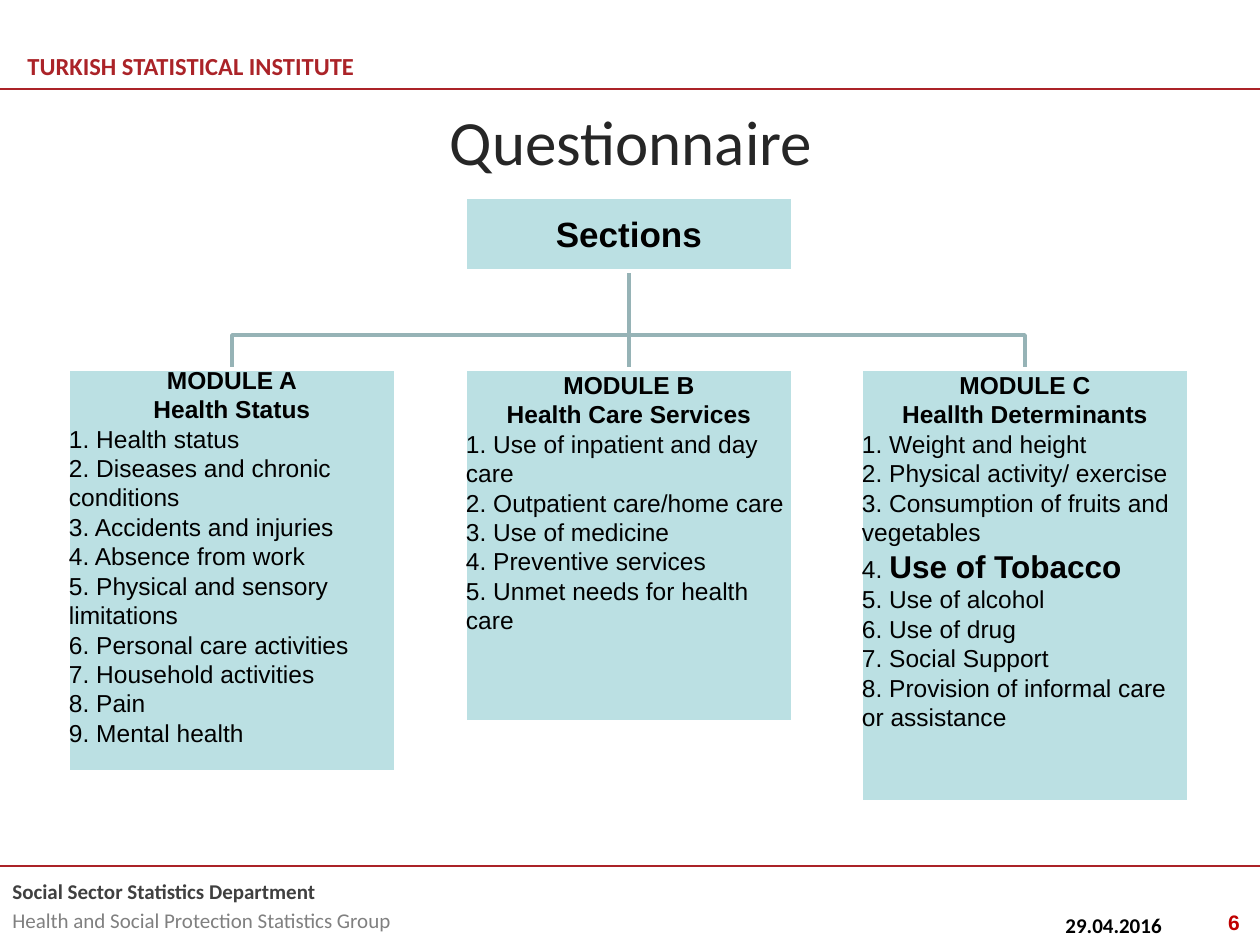
from lxml import etree
from pptx import Presentation
from pptx.dml.color import RGBColor
from pptx.enum.shapes import MSO_CONNECTOR, MSO_SHAPE
from pptx.enum.text import MSO_ANCHOR, PP_ALIGN
from pptx.oxml.ns import qn
from pptx.util import Pt

PX = 914400 / 126
COLORS = {"red": "AB2328", "number": "C00000", "box": "BBE0E3", "link": "96B3B6",
          "white": "FFFFFF", "black": "000000", "title": "262626",
          "dark": "404040", "gray": "808080"}
LEFT, CENTER, RIGHT = PP_ALIGN.LEFT, PP_ALIGN.CENTER, PP_ALIGN.RIGHT


def px(*values):
    return [round(v * PX) for v in values]


def write(tf, paragraphs):
    """Fill tf; each paragraph is (alignment, [(text, size, bold, font, color)])."""
    tf.word_wrap = True
    for i, (align, runs) in enumerate(paragraphs):
        p = tf.add_paragraph() if i else tf.paragraphs[0]
        p.alignment = align
        for text, size, bold, font, color in runs:
            r = p.add_run()
            r.text = text
            r.font.size, r.font.bold, r.font.name = Pt(size), bold, font
            r.font.color.rgb = RGBColor.from_string(COLORS[color])


prs = Presentation()
prs.slide_width, prs.slide_height = px(1260, 945)
s = prs.slides.add_slide(prs.slide_layouts[6])

# Header, footer and title
for y in (89, 866):
    rule = s.shapes.add_connector(MSO_CONNECTOR.STRAIGHT, *px(0, y, 1260, y))
    rule.line.color.rgb = RGBColor.from_string(COLORS["red"])
    rule.line.width = Pt(1.5)
    etree.SubElement(rule._element.spPr, qn("a:effectLst"))

texts = [
    ((15, 41, 446, 49), MSO_ANCHOR.MIDDLE,
     [(LEFT, [("TURKISH STATISTICAL INSTITUTE", 14, True, "Calibri", "red")])]),
    ((0, 872, 541, 69), MSO_ANCHOR.TOP,
     [(LEFT, [("Social Sector Statistics Department", 12, True, "Calibri", "dark")]),
      (LEFT, [("Health and Social Protection Statistics Group", 12, False, "Calibri", "gray")])]),
    ((1053, 906, 294, 66), MSO_ANCHOR.TOP,
     [(LEFT, [("29.04.2016", 12, True, "Calibri", "black")])]),
    ((958, 903, 294, 66), MSO_ANCHOR.TOP,
     [(RIGHT, [("6", 12, True, "Arial", "number")])]),
    ((64, 96, 1134, 89), MSO_ANCHOR.MIDDLE,
     [(CENTER, [("Questionnaire", 36, False, "Calibri", "title")])]),
]
for box, anchor, paragraphs in texts:
    tf = s.shapes.add_textbox(*px(*box)).text_frame
    tf.vertical_anchor = anchor
    write(tf, paragraphs)
    for p in tf.paragraphs[1:]:
        p.space_before = Pt(2.4)

# Links of the tree, behind its boxes
BOX_W, ROOT_TOP, ROOT_H, MODULE_TOP, BEND = 328, 197, 74, 369, 335
LEFTS = [68, 465, 861]
left_x, mid_x, right_x = [x + BOX_W // 2 for x in LEFTS]
ROOT_BOTTOM = ROOT_TOP + ROOT_H

links = []
for x in (right_x, left_x):
    fb = s.shapes.build_freeform(mid_x, ROOT_BOTTOM, scale=PX)
    fb.add_line_segments([(mid_x, BEND), (x, BEND), (x, MODULE_TOP)], close=False)
    sp = fb.convert_to_shape()
    sp.fill.background()
    sp.shadow.inherit = False
    links.append(sp)
trunk = s.shapes.add_connector(MSO_CONNECTOR.STRAIGHT,
                               *px(mid_x, ROOT_BOTTOM, mid_x, MODULE_TOP))
etree.SubElement(trunk._element.spPr, qn("a:effectLst"))
for link in links + [trunk]:
    link.line.color.rgb = RGBColor.from_string(COLORS["link"])
    link.line.width = Pt(2)

# Boxes: the root and the three modules
modules = [
    (403, ["MODULE A", "Health Status"],
     ["Health status", "Diseases and chronic conditions", "Accidents and injuries",
      "Absence from work", "Physical and sensory limitations",
      "Personal care activities", "Household activities", "Pain", "Mental health"]),
    (353, ["MODULE B", "Health Care Services"],
     ["Use of inpatient and day care", "Outpatient care/home care", "Use of medicine",
      "Preventive services", "Unmet needs for health care"]),
    (433, ["MODULE C", "Heallth Determinants"],
     ["Weight and height", "Physical activity/ exercise",
      "Consumption of fruits and vegetables", "Use of Tobacco", "Use of alcohol",
      "Use of drug", "Social Support", "Provision of informal care or assistance"]),
]
boxes = [((LEFTS[1], ROOT_TOP, BOX_W, ROOT_H), MSO_ANCHOR.MIDDLE,
          [(CENTER, [("Sections", 20, True, "Arial", "black")])])]
for x, (height, heading, items) in zip(LEFTS, modules):
    paragraphs = [(CENTER, [(line, 14, True, "Arial", "black")]) for line in heading]
    for n, item in enumerate(items, 1):
        stressed = item == "Use of Tobacco"
        paragraphs.append((LEFT, [(f"{n}. ", 14, False, "Arial", "black"),
                                  (item, 18 if stressed else 14, stressed, "Arial", "black")]))
    boxes.append(((x, MODULE_TOP, BOX_W, height), MSO_ANCHOR.TOP, paragraphs))

rects = []
for box, anchor, paragraphs in boxes:
    sp = s.shapes.add_shape(MSO_SHAPE.RECTANGLE, *px(*box))
    sp.shadow.inherit = False
    sp.fill.solid()
    sp.fill.fore_color.rgb = RGBColor.from_string(COLORS["box"])
    sp.line.color.rgb = RGBColor.from_string(COLORS["white"])
    sp.line.width = Pt(2)
    tf = sp.text_frame
    tf.margin_left, tf.margin_top, tf.margin_right, tf.margin_bottom = px(1, 1, 1, 1)
    tf.vertical_anchor = anchor
    write(tf, paragraphs)
    rects.append(sp)

root, module_a, module_b, module_c = rects
trunk.begin_connect(root, 2)
trunk.end_connect(module_b, 0)

# Module A is centred above a reserved last line, so its heading meets the top edge
module_a.text_frame.vertical_anchor = MSO_ANCHOR.MIDDLE
module_a.text_frame.margin_bottom = px(30)[0]

prs.save("out.pptx")
